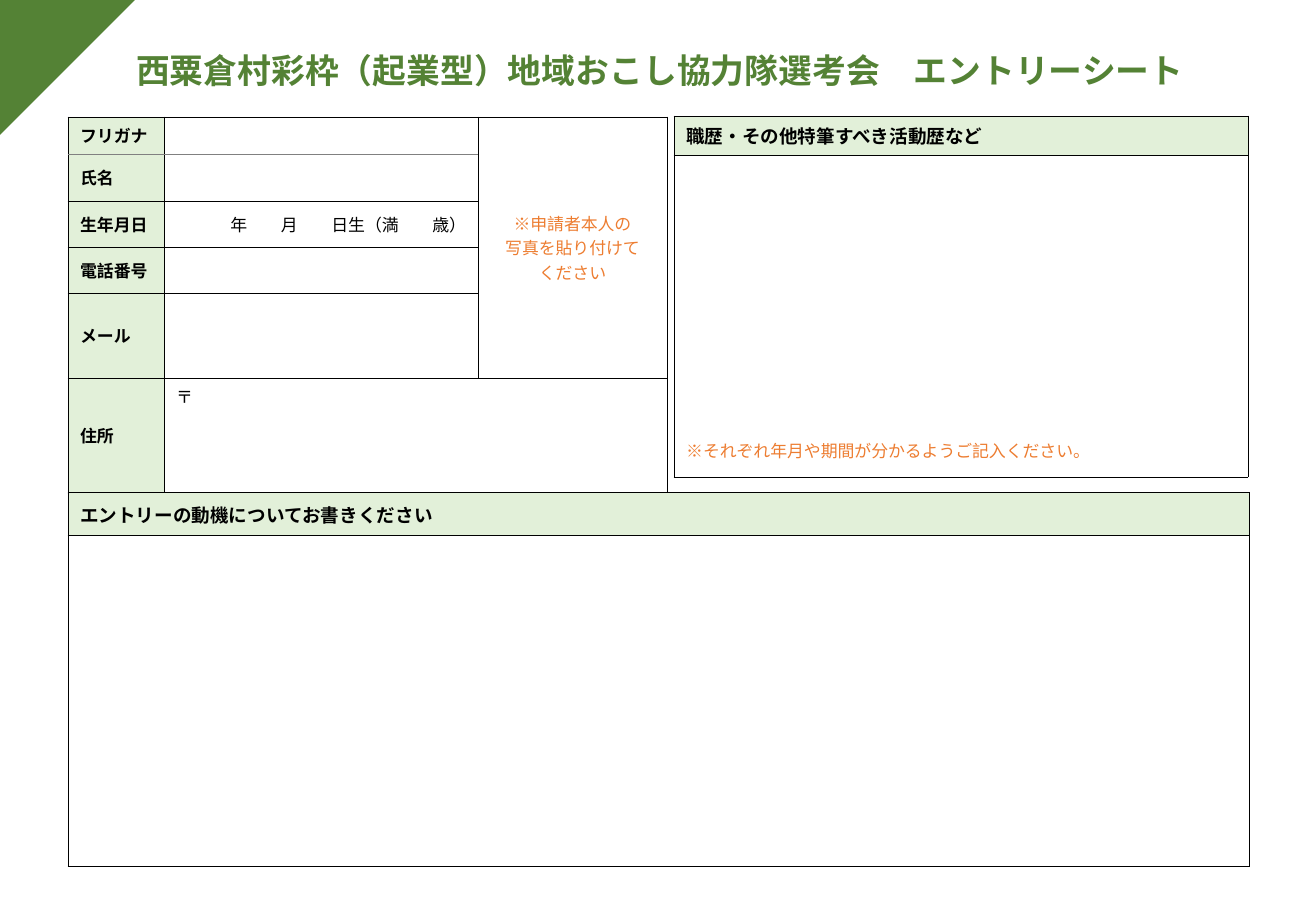
from lxml import etree
from pptx import Presentation
from pptx.dml.color import RGBColor
from pptx.enum.shapes import MSO_SHAPE
from pptx.enum.text import MSO_ANCHOR, MSO_AUTO_SIZE, PP_ALIGN
from pptx.oxml.ns import qn
from pptx.util import Inches, Pt

LEFT, CENTER, RIGHT = PP_ALIGN.LEFT, PP_ALIGN.CENTER, PP_ALIGN.RIGHT
TOP, MIDDLE, BOTTOM = MSO_ANCHOR.TOP, MSO_ANCHOR.MIDDLE, MSO_ANCHOR.BOTTOM
RIGHT_TRIANGLE = MSO_SHAPE.RIGHT_TRIANGLE
NO_AUTO_SIZE = MSO_AUTO_SIZE.NONE

COLORS = {"green": "548235", "label": "E2F0D9", "paper": "FFFFFF",
          "ink": "000000", "hint": "ED7D31", "divider": "808080"}
FONT = "Noto Sans CJK JP"
TITLE_ONLY = 5


def rgb(name):
    return RGBColor.from_string(COLORS[name])


class EntrySheet:
    """Style and slide of the form; lengths are percentages of the slide size."""

    def __init__(self, width, height):
        self.presentation = Presentation()
        self.presentation.slide_width = Inches(width)
        self.presentation.slide_height = Inches(height)
        layout = self.presentation.slide_layouts[TITLE_ONLY]
        self.slide = self.presentation.slides.add_slide(layout)

    def x(self, share):
        return round(self.presentation.slide_width * share / 100)

    def y(self, share):
        return round(self.presentation.slide_height * share / 100)

    def style_paragraph(self, paragraph, size, color="ink", bold=False, align=LEFT):
        paragraph.alignment = align
        font = paragraph.font
        font.size, font.bold, font.name = Pt(size), bold, FONT
        font.color.rgb = rgb(color)
        # East Asian typeface
        properties = paragraph._p.pPr.find(qn("a:defRPr"))
        etree.SubElement(properties, qn("a:ea"), typeface=FONT)

    def title(self, text, left, top, width, height):
        shape = self.slide.shapes.title
        shape.left, shape.top = self.x(left), self.y(top)
        shape.width, shape.height = self.x(width), self.y(height)
        frame = shape.text_frame
        frame.text = text
        frame.word_wrap, frame.auto_size = False, NO_AUTO_SIZE
        frame.vertical_anchor = MIDDLE
        frame.paragraphs[0].line_spacing = 0.9
        self.style_paragraph(frame.paragraphs[0], 20, "green", bold=True)

    def corner(self, width, height):
        shape = self.slide.shapes.add_shape(
            RIGHT_TRIANGLE, 0, 0, self.x(width), self.y(height))
        shape.rotation = 90
        shape.shadow.inherit = False
        shape.fill.solid()
        shape.fill.fore_color.rgb = rgb("green")
        shape.line.fill.background()

    def table(self, left, top, columns, rows):
        frame = self.slide.shapes.add_table(
            len(rows), len(columns), self.x(left), self.y(top),
            self.x(sum(columns)), self.y(sum(rows)))
        table = frame.table
        table.first_row = table.horz_banding = False
        for column, width in zip(table.columns, columns):
            column.width = self.x(width)
        for row, height in zip(table.rows, rows):
            row.height = self.y(height)
        for cell in table.iter_cells():
            self.borders(cell)
            cell.fill.solid()
            cell.fill.fore_color.rgb = rgb("paper")
            # Small empty lines keep the row heights
            etree.SubElement(cell.text_frame.paragraphs[0]._p,
                             qn("a:endParaRPr"), sz="1000")
        return table

    def borders(self, cell, sides="LRTB", color="ink"):
        properties = cell._tc.get_or_add_tcPr()
        for index, side in enumerate(sides):
            tag = qn(f"a:ln{side}")
            line = properties.find(tag)
            if line is None:
                line = etree.Element(tag, w=str(Pt(0.5)))
                properties.insert(index, line)
            for child in list(line):
                line.remove(child)
            fill = etree.SubElement(line, qn("a:solidFill"))
            etree.SubElement(fill, qn("a:srgbClr"), val=COLORS[color])

    def cell_text(self, cell, text, size=10, color="ink", bold=False,
                  align=LEFT, anchor=MIDDLE):
        cell.text = text
        cell.vertical_anchor = anchor
        for paragraph in cell.text_frame.paragraphs:
            self.style_paragraph(paragraph, size, color, bold, align)

    def label(self, cell, text, size=10):
        cell.fill.fore_color.rgb = rgb("label")
        self.cell_text(cell, text, size, bold=True)

    def section(self, heading, left, top, width, rows):
        table = self.table(left, top, [width], rows)
        self.label(table.cell(0, 0), heading, 11)
        return table


def main():
    sheet = EntrySheet(10.83, 7.5)
    margin = 5.17

    # Personal details
    details = sheet.table(margin, 12.84, [7.29, 23.86, 14.36],
                          [4.06, 5.16, 5.05, 5.05, 9.33, 12.62])
    labels = ["フリガナ", "氏名", "生年月日", "電話番号", "メール", "住所"]
    for row, text in enumerate(labels):
        sheet.label(details.cell(row, 0), text)
    for column in (0, 1):
        sheet.borders(details.cell(0, column), "B", "divider")
        sheet.borders(details.cell(1, column), "T", "divider")
    details.cell(0, 2).merge(details.cell(4, 2))
    details.cell(5, 1).merge(details.cell(5, 2))
    sheet.cell_text(details.cell(0, 2),
                    "※申請者本人の\n写真を貼り付けて\nください",
                    color="hint", align=CENTER)
    sheet.cell_text(details.cell(2, 1), "年　　月　　日生（満　　歳）", align=RIGHT)
    sheet.cell_text(details.cell(5, 1), "〒", anchor=TOP)

    # Work history
    history = sheet.section("職歴・その他特筆すべき活動歴など",
                            51.22, 12.73, 43.62, [4.28, 35.34])
    note = history.cell(1, 0)
    sheet.cell_text(note, "※それぞれ年月や期間が分かるようご記入ください。",
                    color="hint", anchor=BOTTOM)
    note.margin_bottom = Inches(0.12)

    # Motivation
    sheet.section("エントリーの動機についてお書きください",
                  margin, 54.1, 89.74, [4.72, 36.32])

    # Corner and title
    sheet.corner(10.26, 14.81)
    sheet.title("西粟倉村彩枠（起業型）地域おこし協力隊選考会　エントリーシート",
                9.42, 5.2, 82.2, 5.47)

    sheet.presentation.save("out.pptx")


if __name__ == "__main__":
    main()
